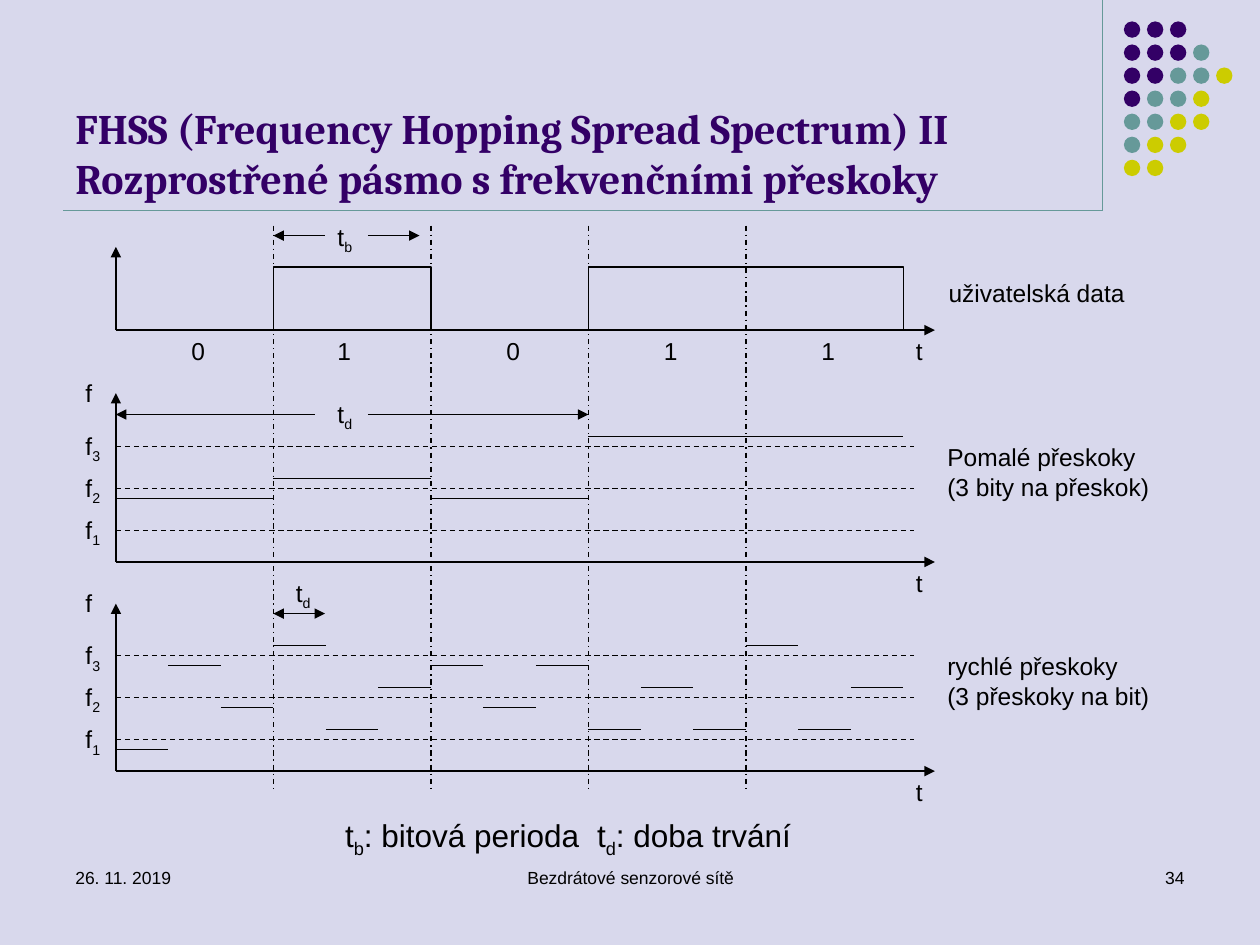
from dataclasses import dataclass

from pptx import Presentation
from pptx.dml.color import RGBColor
from pptx.enum.dml import MSO_LINE
from pptx.enum.shapes import MSO_CONNECTOR, MSO_SHAPE
from pptx.enum.text import MSO_ANCHOR, MSO_AUTO_SIZE, PP_ALIGN
from pptx.oxml.ns import qn
from pptx.util import Inches, Pt
from lxml import etree

STRAIGHT, OVAL = MSO_CONNECTOR.STRAIGHT, MSO_SHAPE.OVAL
DASH, DASH_DOT = MSO_LINE.DASH, MSO_LINE.DASH_DOT
TOP, BOTTOM = MSO_ANCHOR.TOP, MSO_ANCHOR.BOTTOM
LEFT, CENTER, RIGHT = PP_ALIGN.LEFT, PP_ALIGN.CENTER, PP_ALIGN.RIGHT
FIT, FIXED = MSO_AUTO_SIZE.SHAPE_TO_FIT_TEXT, MSO_AUTO_SIZE.NONE


@dataclass(frozen=True)
class Theme:
    background: str = "D8D8EC"
    purple: str = "330066"
    teal: str = "669999"
    yellow: str = "CCCC00"
    ink: str = "000000"
    heading_font: str = "Cambria"
    body_font: str = "Arial"
    title: int = 24
    caption: int = 18
    label: int = 14
    footer: int = 10
    line: float = 0.75


THEME = Theme()

# Content: "\n" starts a paragraph, "\v" breaks a line, "_" lowers the next letter
TITLE = ("FHSS (Frequency Hopping Spread Spectrum) II\v"
         "Rozprostřené pásmo s frekvenčními přeskoky")
CAPTION = "t_b: bitová perioda\tt_d: doba trvání"
FOOTERS = [("26. 11. 2019", 0.5, 2.33, LEFT),
           ("Bezdrátové senzorové sítě", 3.42, 3.17, CENTER),
           ("34", 7.17, 2.33, RIGHT)]
BITS = [0, 1, 0, 1, 1]
BIT_LABEL_LEFTS = [1.42, 2.58, 3.92, 5.17, 6.42]
PULSES = [(1, 1), (3, 2)]  # first bit, number of bits
SLOW_HOPS = [(2,), (2,), (2,), (3,), (3,)]  # frequencies within each bit
FAST_HOPS = [(1, 3, 2), (3, 1, 2), (3, 2, 3), (1, 2, 1), (3, 1, 2)]
HOP_CHARTS = [(4.46, 3.12, SLOW_HOPS), (6.12, 4.79, FAST_HOPS)]  # base, top
SIDE_LABELS = [("uživatelská data", 7.43, 2.16, 1.61, 0.34),
               ("Pomalé přeskoky\n(3 bity na přeskok)", 7.42, 3.46, 1.81, 0.57),
               ("rychlé přeskoky\n(3 přeskoky na bit)", 7.42, 5.12, 1.81, 0.57)]
DURATION_LABELS = [("t_b", 2.58, 1.71), ("t_d", 2.58, 3.12), ("t_d", 2.25, 4.54)]
# start, end, y, arrow at start, arrow at end
DURATION_ARROWS = [(2.17, 2.58, 1.87, True, False), (2.92, 3.33, 1.87, False, True),
                   (0.92, 2.5, 3.29, True, False), (2.92, 4.67, 3.29, False, True),
                   (2.17, 2.58, 4.87, True, True)]
DOT_ROWS = ["PPP", "PPPT", "PPTTY", "PTTY", "TTYY", "TYY", "YY"]
DOT_COLORS = {"P": THEME.purple, "T": THEME.teal, "Y": THEME.yellow}

# Geometry in inches
ORIGIN, AXIS_END, GUIDE_END = 0.92, 7.42, 7.25
BIT_WIDTH = 1.25
DATA_BASE, DATA_TOP, PULSE_TOP = 2.62, 1.96, 2.12
FIRST_LEVEL, LEVEL_STEP, BIT_SHIFT = 0.25, 1 / 3, 0.08
LABEL_HEIGHT, LABEL_RISE = 0.33, 0.17
DOT_LEFT, DOT_TOP, DOT_STEP, DOT_SIZE = 8.92, 0.17, 0.183, 0.13


def add_text(page, text, left, top, width, height=LABEL_HEIGHT, size=THEME.label,
             font=THEME.body_font, color=THEME.ink, bold=False, align=LEFT,
             anchor=TOP, wrap=False):
    box = page.shapes.add_textbox(*map(Inches, (left, top, width, height)))
    frame = box.text_frame
    frame.word_wrap = wrap
    frame.auto_size = FIXED if wrap else FIT
    frame.vertical_anchor = anchor

    def add_span(para, words, lowered=False):
        span = para.add_run()
        span.text = words
        span.font.name, span.font.size, span.font.bold = font, Pt(size), bold
        span.font.color.rgb = RGBColor.from_string(color)
        if lowered:
            span.font._element.set("baseline", "-25000")

    for index, paragraph in enumerate(text.split("\n")):
        para = frame.add_paragraph() if index else frame.paragraphs[0]
        para.alignment = align
        for row, line in enumerate(paragraph.split("\v")):
            if row:
                para.add_line_break()
            plain, *lowered_parts = line.split("_")
            add_span(para, plain)
            for part in lowered_parts:
                add_span(para, part[0], lowered=True)
                if part[1:]:
                    add_span(para, part[1:])


def add_line(page, start, end, color=THEME.ink, dash=None, head=False, tail=False):
    line = page.shapes.add_connector(STRAIGHT, *map(Inches, (*start, *end)))
    line.line.color.rgb = RGBColor.from_string(color)
    line.line.width = Pt(THEME.line)
    if dash:
        line.line.dash_style = dash
    outline = line.line._get_or_add_ln()
    for tag, wanted in (("a:headEnd", head), ("a:tailEnd", tail)):
        if wanted:
            etree.SubElement(outline, qn(tag), type="triangle")
    etree.SubElement(line._element.spPr, qn("a:effectLst"))


def add_axes(page, base, top):
    add_line(page, (ORIGIN, base), (ORIGIN, top), tail=True)
    add_line(page, (ORIGIN, base), (AXIS_END, base), tail=True)
    add_text(page, "t", 7.17, base, 0.26)


def bit_left(index):
    return ORIGIN + index * BIT_WIDTH


def add_frame(page):
    """Title, dividing lines, corner dots and footer."""
    add_line(page, (8.75, 0), (8.75, 1.67), THEME.teal)
    add_line(page, (0.5, 1.67), (8.75, 1.67), THEME.teal)
    dots = page.shapes.add_group_shape().shapes
    for row, letters in enumerate(DOT_ROWS):
        for column, letter in enumerate(letters):
            dot = dots.add_shape(OVAL, Inches(DOT_LEFT + column * DOT_STEP),
                                 Inches(DOT_TOP + row * DOT_STEP),
                                 Inches(DOT_SIZE), Inches(DOT_SIZE))
            dot.shadow.inherit = False
            dot.fill.solid()
            dot.fill.fore_color.rgb = RGBColor.from_string(DOT_COLORS[letter])
            dot.line.fill.background()
    add_text(page, TITLE, 0.5, 0.13, 8.28, 1.53, size=THEME.title, bold=True,
             font=THEME.heading_font, color=THEME.purple, anchor=BOTTOM, wrap=True)
    for text, left, width, align in FOOTERS:
        add_text(page, text, left, 6.83, width, 0.5, size=THEME.footer,
                 align=align, wrap=True)


def add_data_chart(page):
    add_axes(page, DATA_BASE, DATA_TOP)
    for first, count in PULSES:
        left, right = Inches(bit_left(first)), Inches(bit_left(first + count))
        base, top = Inches(DATA_BASE), Inches(PULSE_TOP)
        builder = page.shapes.build_freeform(left, base)
        builder.add_line_segments([(left, top), (right, top), (right, base)], close=False)
        pulse = builder.convert_to_shape()
        pulse.shadow.inherit = False
        pulse.fill.background()
        pulse.line.color.rgb = RGBColor.from_string(THEME.ink)
        pulse.line.width = Pt(THEME.line)
    for bit, left in zip(BITS, BIT_LABEL_LEFTS):
        add_text(page, str(bit), left, DATA_BASE, 0.31)


def add_hop_chart(page, base, top, hops):
    """Each hop runs just above its frequency for a 1 and just below for a 0."""
    add_axes(page, base, top)
    add_text(page, "f", 0.58, top - LABEL_RISE, 0.26)
    levels = {number: base - FIRST_LEVEL - (number - 1) * LEVEL_STEP
              for number in (1, 2, 3)}
    for number, level in levels.items():
        add_line(page, (ORIGIN, level), (GUIDE_END, level), dash=DASH)
        add_text(page, f"f_{number}", 0.58, level - LABEL_RISE, 0.32)
    for index, (bit, numbers) in enumerate(zip(BITS, hops)):
        width = BIT_WIDTH / len(numbers)
        for slot, number in enumerate(numbers):
            left = bit_left(index) + slot * width
            height = levels[number] + (-BIT_SHIFT if bit else BIT_SHIFT)
            add_line(page, (left, height), (left + width, height))


def main():
    deck = Presentation()
    deck.slide_width, deck.slide_height = Inches(10), Inches(7.5)
    page = deck.slides.add_slide(deck.slide_layouts[6])
    page.background.fill.solid()
    page.background.fill.fore_color.rgb = RGBColor.from_string(THEME.background)

    add_frame(page)
    add_data_chart(page)
    for base, top, hops in HOP_CHARTS:
        add_hop_chart(page, base, top, hops)
    for index in range(1, len(BITS)):
        add_line(page, (bit_left(index), 1.79), (bit_left(index), 6.29), dash=DASH_DOT)
    for start, end, height, head, tail in DURATION_ARROWS:
        add_line(page, (start, height), (end, height), head=head, tail=tail)
    for text, left, top in DURATION_LABELS:
        add_text(page, text, left, top, 0.32)
    for label in SIDE_LABELS:
        add_text(page, *label)
    add_text(page, CAPTION, 2.64, 6.43, 3.79, 0.4, size=THEME.caption)
    deck.save("out.pptx")


if __name__ == "__main__":
    main()
